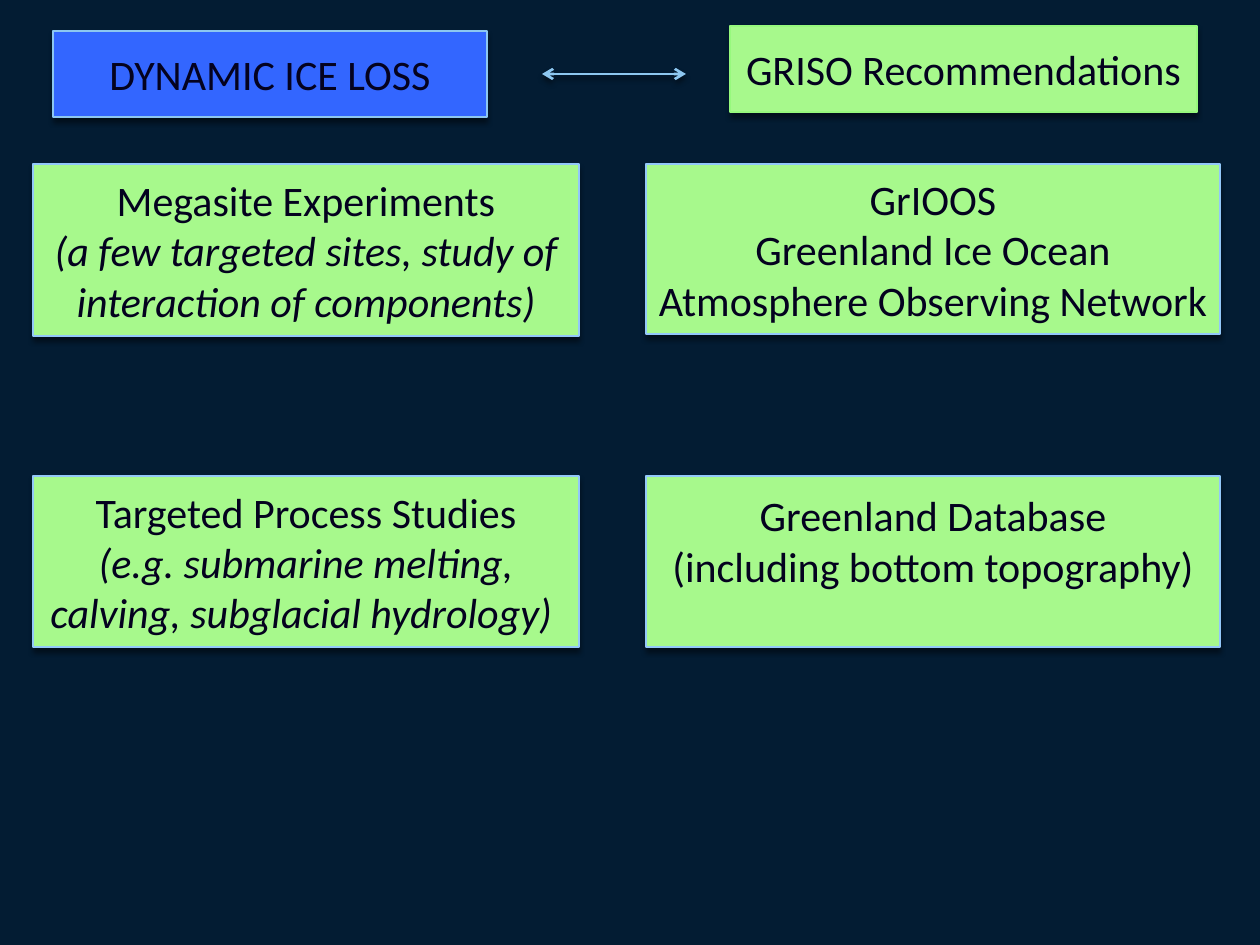
from lxml import etree
from pptx import Presentation
from pptx.dml.color import RGBColor
from pptx.enum.shapes import MSO_CONNECTOR, MSO_SHAPE
from pptx.enum.text import MSO_ANCHOR, MSO_AUTO_SIZE, PP_ALIGN
from pptx.oxml.ns import qn
from pptx.util import Emu, Pt

RECTANGLE = MSO_SHAPE.RECTANGLE
STRAIGHT = MSO_CONNECTOR.STRAIGHT
MIDDLE = MSO_ANCHOR.MIDDLE
NO_AUTOFIT = MSO_AUTO_SIZE.NONE
CENTER = PP_ALIGN.CENTER

NAVY = RGBColor(0x03, 0x1C, 0x33)
INK = RGBColor(0x04, 0x02, 0x1F)
BLUE = RGBColor(0x33, 0x66, 0xFF)
GREEN = RGBColor(0xA7, 0xF9, 0x8C)
GREEN_EDGE = RGBColor(0x97, 0xF9, 0x7D)
SKY = RGBColor(0x8D, 0xC7, 0xF0)
PALE_SKY = RGBColor(0x93, 0xC8, 0xF9)

PX = 914400 / 126


def add_shadow(properties):
    effects = etree.SubElement(properties, qn("a:effectLst"))
    shadow = etree.SubElement(effects, qn("a:outerShdw"), blurRad="38100",
                              dist="30480", dir="5400000", rotWithShape="0")
    color = etree.SubElement(shadow, qn("a:srgbClr"), val="000000")
    etree.SubElement(color, qn("a:alpha"), val="45000")


def write_box(box, text, place, fill=GREEN, edge=PALE_SKY, italic_detail=False, bottom=6):
    box.left, box.top, box.width, box.height = [Emu(round(value * PX)) for value in place]
    box.fill.solid()
    box.fill.fore_color.rgb = fill
    box.line.color.rgb = edge
    box.line.width = Pt(0.79)
    add_shadow(box._element.spPr)
    frame = box.text_frame
    frame.text = text
    frame.word_wrap = True
    frame.auto_size = NO_AUTOFIT
    frame.vertical_anchor = MIDDLE
    frame.margin_bottom = Emu(round(bottom * PX))
    for index, para in enumerate(frame.paragraphs):
        para.alignment = CENTER
        for span in para.runs:
            span.font.name = "Calibri"
            span.font.size = Pt(24)
            span.font.color.rgb = INK
            span.font.italic = italic_detail and index > 0


deck = Presentation()
deck.slide_width = Emu(round(1260 * PX))
deck.slide_height = Emu(round(945 * PX))
page = deck.slides.add_slide(deck.slide_layouts[5])
page.background.fill.solid()
page.background.fill.fore_color.rgb = NAVY

write_box(page.shapes.title, "DYNAMIC ICE LOSS", (53, 31, 434, 86), fill=BLUE, edge=SKY)

arrow = page.shapes.add_connector(
    STRAIGHT, *[Emu(round(value * PX)) for value in (542, 74, 686, 74)])
arrow.line.color.rgb = SKY
arrow.line.width = Pt(1.5)
for end in ("a:headEnd", "a:tailEnd"):
    etree.SubElement(arrow.line._get_or_add_ln(), qn(end), type="arrow")
add_shadow(arrow._element.spPr)

LEFT, RIGHT = (33, 546), (646, 574)
UPPER, LOWER = 164, 476
boxes = [
    ("GRISO Recommendations", (730, 26, 467, 86), {"edge": GREEN_EDGE}),
    ("Targeted Process Studies\n(e.g. submarine melting, calving, subglacial hydrology) ",
     (LEFT[0], LOWER, LEFT[1], 171), {"italic_detail": True}),
    ("Megasite Experiments\n(a few targeted sites, study of interaction of components)",
     (LEFT[0], UPPER, LEFT[1], 172), {"italic_detail": True}),
    ("GrIOOS\nGreenland Ice Ocean Atmosphere Observing Network ",
     (RIGHT[0], UPPER, RIGHT[1], 170), {}),
    ("Greenland Database\n(including bottom topography)",
     (RIGHT[0], LOWER, RIGHT[1], 171), {"bottom": 49}),
]
for text, place, style in boxes:
    box = page.shapes.add_shape(RECTANGLE, 0, 0, 0, 0)
    write_box(box, text, place, **style)

deck.save("out.pptx")
